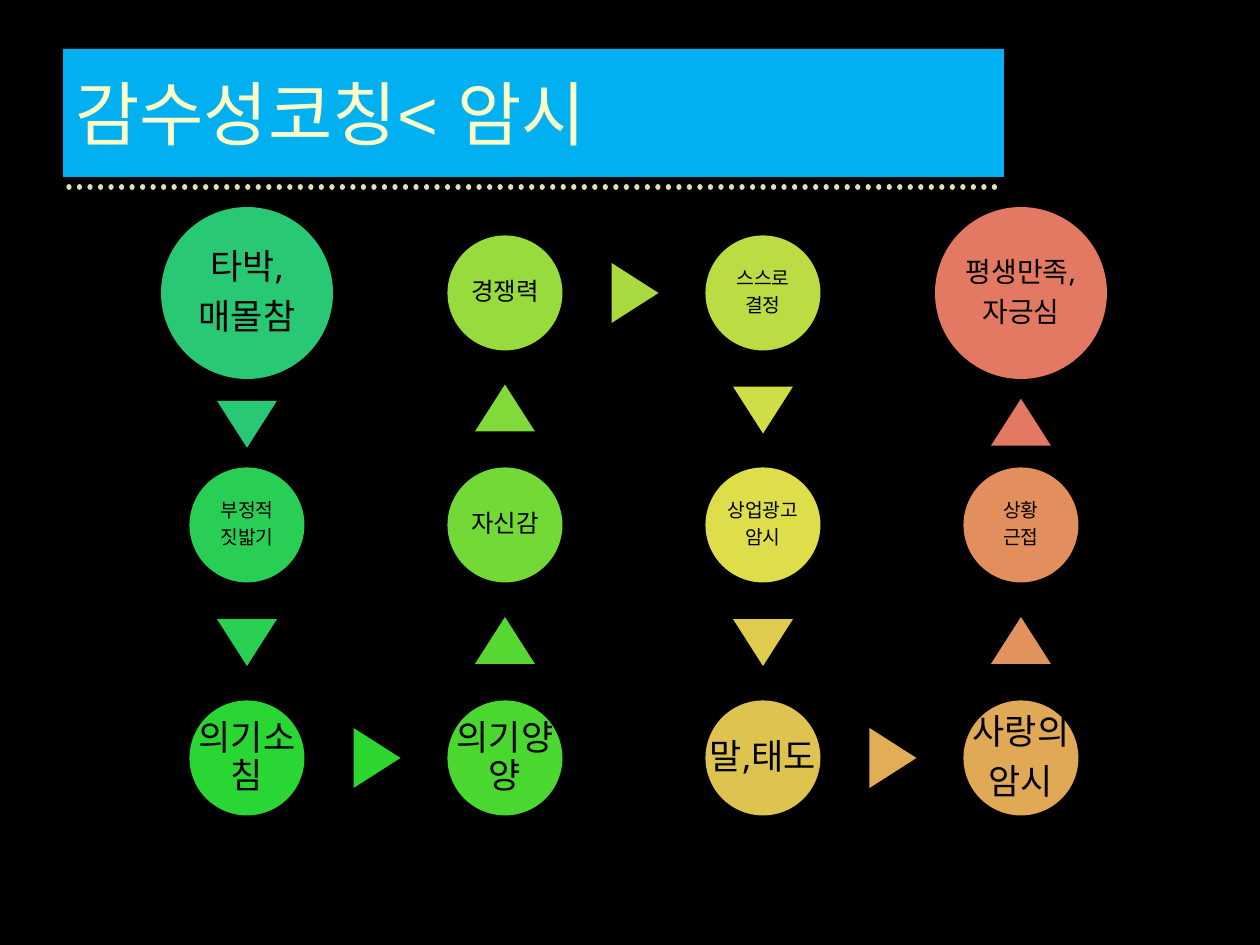
from dataclasses import dataclass
from itertools import pairwise

from pptx import Presentation
from pptx.dml.color import RGBColor
from pptx.enum import dml, shapes, text
from pptx.oxml.ns import qn
from pptx.oxml.xmlchemy import OxmlElement
from pptx.util import Emu, Pt

PX = 914400 / 126
COLUMNS = [247 + 258 * column for column in range(4)]
ROWS = [293, 525, 758]
SMALL, LARGE = 115, 172
ARROW_WIDTH, ARROW_HEIGHT = 60, 47
ARROW_SHIFT = 1


@dataclass(frozen=True)
class Step:
    column: int
    row: int
    lines: tuple[str, ...]
    font_size: int
    fill: str
    arrow_fill: str = ""
    size: int = SMALL

    @property
    def center(self) -> tuple[int, int]:
        return COLUMNS[self.column], ROWS[self.row]


STEPS = [
    Step(0, 0, ("타박,", "매몰참"), 20, "28C874", "28C874", LARGE),
    Step(0, 1, ("부정적", "짓밟기"), 11, "29CF55", "29D052"),
    Step(0, 2, ("의기소침",), 20, "2AD634", "2CD62E"),
    Step(1, 2, ("의기양양",), 20, "4AD730", "56D832"),
    Step(1, 1, ("자신감",), 14, "72D937", "81DA39"),
    Step(1, 0, ("경쟁력",), 14, "97DB3D", "A9DB40"),
    Step(2, 0, ("스스로", "결정"), 11, "BBDC43", "CFDD47"),
    Step(2, 1, ("상업광고", "암시"), 11, "DDDE4A", "DFCB4E"),
    Step(2, 2, ("말,태도",), 20, "DFC350", "E1AD55"),
    Step(3, 2, ("사랑의", "암시"), 20, "E1A856", "E2925C"),
    Step(3, 1, ("상황", "근접"), 11, "E38F5D", "E47963"),
    Step(3, 0, ("평생만족,", "자긍심"), 16, "E47963", size=LARGE),
]


def px(length: float) -> Emu:
    return Emu(round(length * PX))


def color(value: str) -> RGBColor:
    return RGBColor.from_string(value)


def add_filled(page, kind, left: float, top: float, width: int, height: int, fill: str):
    shape = page.shapes.add_shape(kind, px(left), px(top), px(width), px(height))
    shape.shadow.inherit = False
    shape.fill.solid()
    shape.fill.fore_color.rgb = color(fill)
    shape.line.fill.background()
    return shape


def add_title(page) -> None:
    box = add_filled(page, shapes.MSO_SHAPE.RECTANGLE, 63, 49, 941, 128, "00B0F0")
    box.text_frame.vertical_anchor = text.MSO_ANCHOR.MIDDLE
    para = box.text_frame.paragraphs[0]
    para.text = "감수성코칭< 암시"
    para.alignment = text.PP_ALIGN.LEFT
    para.font.name = "Arial"
    para.font.size = Pt(40)
    para.font.color.rgb = color("FBFEC6")


def add_dotted_rule(page) -> None:
    rule = page.shapes.add_connector(
        shapes.MSO_CONNECTOR.STRAIGHT, px(69), px(187), px(1004), px(187))
    rule.line.color.rgb = color("DDE0AF")
    rule.line.width = Pt(3)
    rule.line.dash_style = dml.MSO_LINE.ROUND_DOT
    properties = rule._element.spPr
    properties.find(qn("a:ln")).set("cap", "rnd")
    properties.append(OxmlElement("a:effectLst"))


def add_step(page, step: Step) -> None:
    """Draw a circle and a label that may use the circle's full bounding square."""
    x, y = step.center
    left, top = x - step.size / 2, y - step.size / 2
    add_filled(page, shapes.MSO_SHAPE.OVAL, left, top, step.size, step.size, step.fill)
    box = page.shapes.add_textbox(px(left), px(top), px(step.size), px(step.size))
    frame = box.text_frame
    frame.word_wrap = True
    frame.vertical_anchor = text.MSO_ANCHOR.MIDDLE
    frame.margin_left = frame.margin_right = px(3)
    frame.margin_top = frame.margin_bottom = px(3)
    frame.text = "\n".join(step.lines)
    for para in frame.paragraphs:
        para.alignment = text.PP_ALIGN.CENTER
        para.line_spacing = 0.9
        para.space_after = Pt(step.font_size * 0.35)
        para.font.name = "Noto Sans"
        para.font.size = Pt(step.font_size)
        para.font.color.rgb = color("000000")


def add_arrow(page, start: Step, end: Step) -> None:
    """Point a triangle from one circle to the next, midway between their edges."""
    (x1, y1), (x2, y2) = start.center, end.center
    step_x, step_y = (x2 > x1) - (x2 < x1), (y2 > y1) - (y2 < y1)
    shift = (start.size - end.size) / 4 + ARROW_SHIFT
    x = (x1 + x2) / 2 + step_x * shift
    y = (y1 + y2) / 2 + step_y * shift
    arrow = add_filled(page, shapes.MSO_SHAPE.ISOSCELES_TRIANGLE,
                       x - ARROW_WIDTH / 2, y - ARROW_HEIGHT / 2,
                       ARROW_WIDTH, ARROW_HEIGHT, start.arrow_fill)
    arrow.rotation = {(1, 0): 90, (0, 1): 180, (0, -1): 0}[step_x, step_y]


def main() -> None:
    deck = Presentation()
    deck.slide_width, deck.slide_height = px(1260), px(945)
    page = deck.slides.add_slide(deck.slide_layouts[6])
    page.background.fill.solid()
    page.background.fill.fore_color.rgb = color("000000")
    add_dotted_rule(page)
    add_title(page)
    for step in STEPS:
        add_step(page, step)
    for start, end in pairwise(STEPS):
        add_arrow(page, start, end)
    deck.save("out.pptx")


if __name__ == "__main__":
    main()
